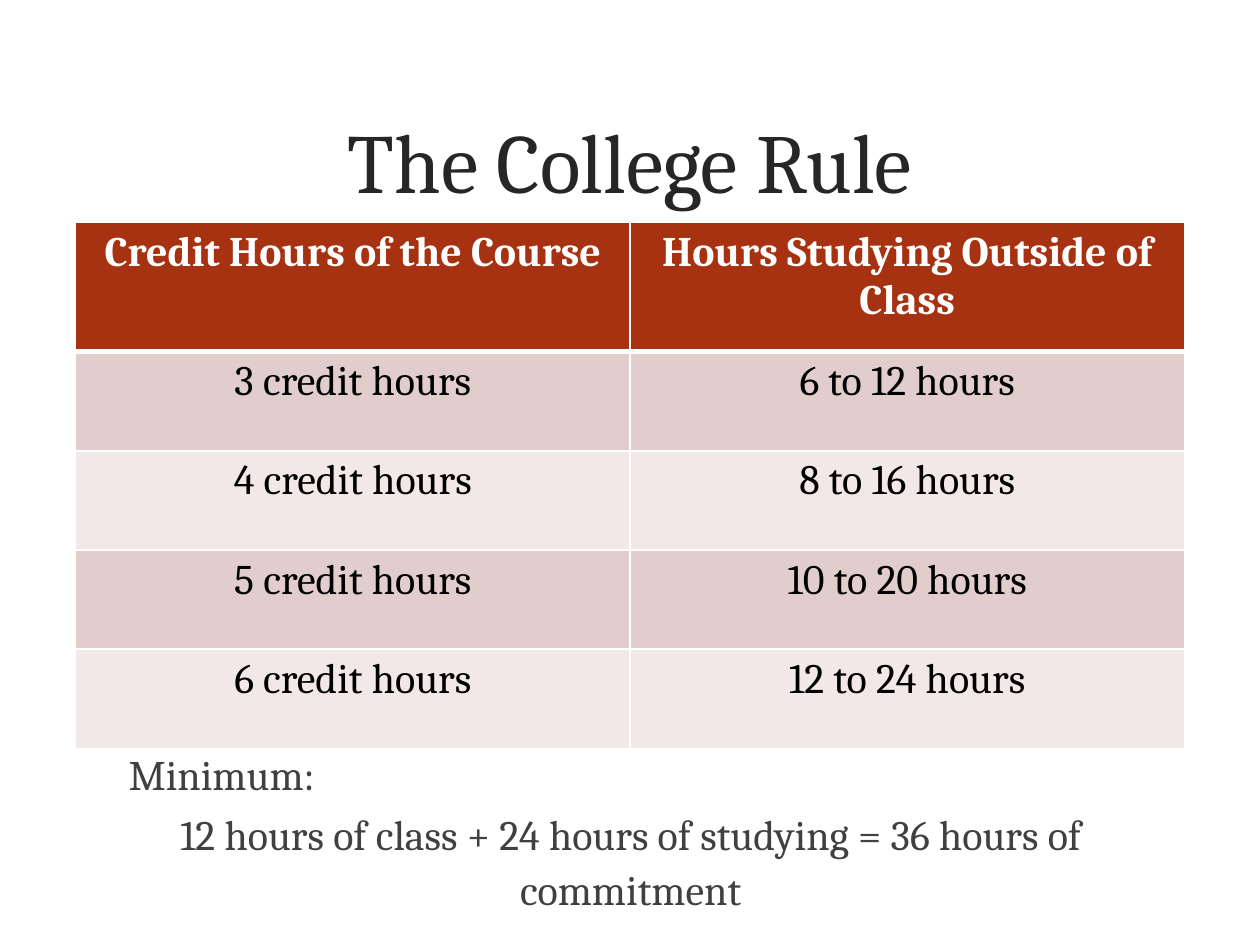
import pptx
import pptx.dml.color
import pptx.enum.text
import pptx.oxml
import pptx.oxml.ns
import pptx.util

RGBColor = pptx.dml.color.RGBColor
ALIGN = pptx.enum.text.PP_ALIGN
ANCHOR = pptx.enum.text.MSO_ANCHOR

WHITE = RGBColor(0xFF, 0xFF, 0xFF)
BLACK = RGBColor(0x00, 0x00, 0x00)
TITLE_GRAY = RGBColor(0x26, 0x26, 0x26)
BODY_GRAY = RGBColor(0x40, 0x40, 0x40)
HEADER_RED = RGBColor(0xA6, 0x32, 0x12)
BAND_DARK = RGBColor(0xE1, 0xCE, 0xCC)
BAND_LIGHT = RGBColor(0xF1, 0xE8, 0xE7)

WIDTH, HEIGHT = pptx.util.Inches(10), pptx.util.Inches(7.5)

# Regions as shares of the slide: left, top, width, height
TITLE_BOX = (0.06, 0.064, 0.88, 0.21)
TABLE_BOX = (0.06, 0.235, 0.88, 0.557)
SUMMARY_BOX = (0.092, 0.781, 0.817, 0.181)

HOURS = [
    ("Credit Hours of the Course", "Hours Studying Outside of Class"),
    ("3 credit hours", "6 to 12 hours"),
    ("4 credit hours", "8 to 16 hours"),
    ("5 credit hours", "10 to 20 hours"),
    ("6 credit hours", "12 to 24 hours"),
]
HEADER_SHARE = 0.246
SUMMARY = [
    ("Minimum:", ALIGN.LEFT),
    ("12 hours of class + 24 hours of studying = 36 hours of commitment", ALIGN.CENTER),
]


def to_lengths(box):
    return [round(share * side) for share, side in zip(box, (WIDTH, HEIGHT) * 2)]


def place(shape, box):
    for side, length in zip(("left", "top", "width", "height"), to_lengths(box)):
        setattr(shape, side, length)


def style(paragraph, color, size=24, bold=False, align=ALIGN.CENTER):
    paragraph.alignment = align
    font_format = {"name": "Cambria", "size": pptx.util.Pt(size), "bold": bold}
    for attribute, value in font_format.items():
        setattr(paragraph.font, attribute, value)
    paragraph.font.color.rgb = color


def add_title(slide, box):
    title = slide.shapes.title
    place(title, box)
    frame = title.text_frame
    frame.text = "The College Rule"
    frame.auto_size = pptx.enum.text.MSO_AUTO_SIZE.NONE
    frame.vertical_anchor = ANCHOR.MIDDLE
    style(frame.paragraphs[0], TITLE_GRAY, size=48)


def add_summary(slide, box):
    summary = slide.placeholders[1]
    place(summary, box)
    frame = summary.text_frame
    frame.text = "\n".join(line for line, _ in SUMMARY)
    frame.auto_size = pptx.enum.text.MSO_AUTO_SIZE.NONE
    frame.vertical_anchor = ANCHOR.TOP
    for index, (paragraph, (_, align)) in enumerate(zip(frame.paragraphs, SUMMARY)):
        properties = paragraph._p.get_or_add_pPr()
        properties.set("marL", "0")
        properties.set("indent", "0")
        pptx.oxml.ns.qn("a:buNone")
        properties.append(pptx.oxml.parse_xml(
            f'<a:buNone {pptx.oxml.ns.nsdecls("a")}/>'))
        paragraph.line_spacing = 1.08
        paragraph.space_before = pptx.util.Pt(3.5 if index else 0)
        style(paragraph, BODY_GRAY, align=align)


def set_borders(cell, widths):
    """Draw white borders; widths gives points for each side."""
    properties = cell._tc.get_or_add_tcPr()
    for position, (side, points) in enumerate(widths.items()):
        properties.insert(position, pptx.oxml.parse_xml(
            f'<a:ln{side} {pptx.oxml.ns.nsdecls("a")} w="{pptx.util.Pt(points)}">'
            f'<a:solidFill><a:srgbClr val="{WHITE}"/></a:solidFill></a:ln{side}>'))


def add_hours_table(slide, box):
    left, top, width, height = to_lengths(box)
    row_count, column_count = len(HOURS), len(HOURS[0])
    table = slide.shapes.add_table(
        row_count, column_count, left, top, width, height).table
    header_height = round(height * HEADER_SHARE)
    for index, row in enumerate(table.rows):
        row.height = (height - header_height) // (row_count - 1) if index else header_height

    for row, labels in enumerate(HOURS):
        is_header = row == 0
        band = BAND_DARK if row % 2 else BAND_LIGHT
        for column, label in enumerate(labels):
            cell = table.cell(row, column)
            cell.text = label
            cell.fill.solid()
            cell.fill.fore_color.rgb = HEADER_RED if is_header else band
            style(cell.text_frame.paragraphs[0],
                  WHITE if is_header else BLACK, bold=is_header)
            set_borders(cell, {"L": 1, "R": 1, "T": 3 if row == 1 else 1,
                               "B": 3 if is_header else 1})


def main():
    deck = pptx.Presentation()
    deck.slide_width, deck.slide_height = WIDTH, HEIGHT
    slide = deck.slides.add_slide(deck.slide_layouts[1])
    add_title(slide, TITLE_BOX)
    add_summary(slide, SUMMARY_BOX)
    add_hours_table(slide, TABLE_BOX)
    deck.save("out.pptx")


if __name__ == "__main__":
    main()
